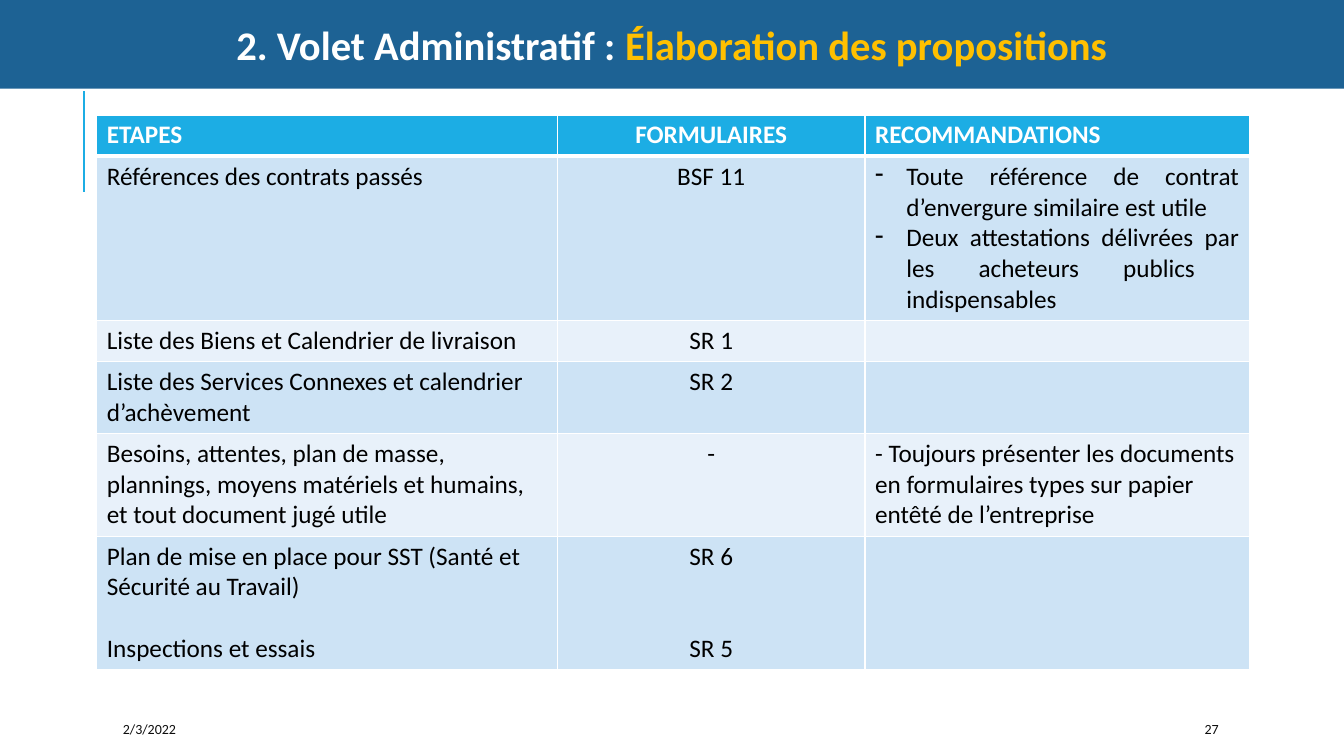
"""Build the slide on preparing the administrative part of a bid."""
from dataclasses import dataclass

from lxml import etree
from pptx import Presentation
from pptx import util as u
from pptx.dml.color import RGBColor
from pptx.enum import shapes, text
from pptx.oxml import ns

WHITE = RGBColor(0xFF, 0xFF, 0xFF)
BLACK = RGBColor(0x00, 0x00, 0x00)
INK = RGBColor(0x0D, 0x0D, 0x0D)
GOLD = RGBColor(0xFF, 0xC0, 0x00)
NAVY = RGBColor(0x1D, 0x62, 0x94)
CYAN = RGBColor(0x1C, 0xAD, 0xE4)
BAND_DARK = RGBColor(0xCD, 0xE3, 0xF5)
BAND_LIGHT = RGBColor(0xE8, 0xF1, 0xFA)

FONT = "Calibri"
BODY_SIZE = 18
LINE_HEIGHT = 22
COLUMN_WIDTHS = (4.57, 3.05, 3.81)
HEADINGS = ("ETAPES", "FORMULAIRES", "RECOMMANDATIONS")


@dataclass(frozen=True)
class Step:
    """One table row; blank_lines is the gap above a cell's second paragraph."""
    height: float
    cells: tuple[tuple[str, ...], ...]
    blank_lines: tuple[int, ...] = (0, 0, 0)
    bulleted: bool = False


@dataclass(frozen=True)
class FooterItem:
    """A short text at the foot of the slide."""
    wording: str
    left: float
    width: float


STEPS = (
    Step(1.63, (
        ("Références des contrats passés",),
        ("BSF 11",),
        ("Toute référence de contrat d’envergure similaire est utile",
         "Deux attestations délivrées par les acheteurs publics  indispensables"),
    ), bulleted=True),
    Step(0.41, (("Liste des Biens et Calendrier de livraison",), ("SR 1",), ())),
    Step(0.71, (("Liste des Services Connexes et calendrier d’achèvement",), ("SR 2",), ())),
    Step(1.02, (
        ("Besoins, attentes, plan de masse, plannings, moyens matériels et humains, "
         "et tout document jugé utile",),
        ("-",),
        ("- Toujours présenter les documents en formulaires types sur papier "
         "entêté de l’entreprise",),
    )),
    Step(1.32, (
        ("Plan de mise en place pour SST (Santé et Sécurité au Travail)",
         "Inspections et essais"),
        ("SR 6", "SR 5"),
        (),
    ), blank_lines=(1, 2, 0)),
)
FOOTER = (FooterItem("2/3/2022", 1.12, 2.36), FooterItem("27", 11.85, 1.06))


def add_span(para, wording: str, size: float, color: RGBColor, bold: bool = False) -> None:
    """Add one formatted run to a paragraph."""
    span = para.add_run()
    span.text = wording
    span.font.name = FONT
    span.font.size = u.Pt(size)
    span.font.bold = bold
    span.font.color.rgb = color


def add_title(page) -> None:
    """Draw the title band across the top."""
    box = page.shapes.add_shape(
        shapes.MSO_SHAPE.RECTANGLE, 0, 0, u.Inches(13.33), u.Inches(0.88))
    box.shadow.inherit = False
    box.fill.solid()
    box.fill.fore_color.rgb = NAVY
    box.line.fill.background()
    frame = box.text_frame
    frame.word_wrap = True
    frame.vertical_anchor = text.MSO_ANCHOR.MIDDLE
    frame.margin_left = frame.margin_right = u.Inches(0.11)
    frame.margin_top = frame.margin_bottom = u.Inches(0.06)
    para = frame.paragraphs[0]
    para.alignment = text.PP_ALIGN.CENTER
    add_span(para, "2. Volet Administratif : ", 29, WHITE, True)
    add_span(para, "Élaboration des propositions", 29, GOLD, True)


def add_accent(page) -> None:
    """Draw the thin vertical line beside the table."""
    line = page.shapes.add_connector(
        shapes.MSO_CONNECTOR.STRAIGHT,
        u.Inches(0.83), u.Inches(1.9), u.Inches(0.83), u.Inches(0.9))
    line.line.color.rgb = CYAN
    line.line.width = u.Pt(1.5)
    etree.SubElement(line._element.spPr, ns.qn("a:effectLst"))


def add_footer(page, item: FooterItem) -> None:
    """Write one footer text."""
    box = page.shapes.add_textbox(
        u.Inches(item.left), u.Inches(7.08), u.Inches(item.width), u.Inches(0.3))
    box.text_frame.word_wrap = True
    box.text_frame.vertical_anchor = text.MSO_ANCHOR.MIDDLE
    add_span(box.text_frame.paragraphs[0], item.wording, 10, INK)


def style_cell(cell, fill: RGBColor, row: int) -> None:
    """Give a cell white borders, thick under the header, and a solid fill."""
    properties = cell._tc.get_or_add_tcPr()
    widths = {"L": 1, "R": 1, "T": 3 if row == 1 else 1, "B": 3 if row == 0 else 1}
    for side, width in widths.items():
        border = etree.SubElement(
            properties, ns.qn(f"a:ln{side}"), w=str(int(u.Pt(width))))
        solid = etree.SubElement(border, ns.qn("a:solidFill"))
        etree.SubElement(solid, ns.qn("a:srgbClr"), val=str(WHITE))
    cell.fill.solid()
    cell.fill.fore_color.rgb = fill


def add_dash(para) -> None:
    """Turn a paragraph into a justified item with a hanging dash."""
    para.alignment = text.PP_ALIGN.JUSTIFY
    properties = para._p.get_or_add_pPr()
    indent = int(u.Inches(0.31))
    properties.set("marL", str(indent))
    properties.set("indent", str(-indent))
    etree.SubElement(properties, ns.qn("a:buChar"), char="-")


def fill_cell(cell, wordings: tuple[str, ...], column: int, color: RGBColor,
              bold: bool = False, blank_lines: int = 0, dashed: bool = False) -> None:
    """Write the paragraphs of one cell."""
    frame = cell.text_frame
    frame.paragraphs[0].font.size = u.Pt(BODY_SIZE)
    for index, wording in enumerate(wordings):
        para = frame.add_paragraph() if index else frame.paragraphs[0]
        if index and blank_lines:
            para.space_before = u.Pt(blank_lines * LINE_HEIGHT)
        if dashed:
            add_dash(para)
        else:
            para.alignment = text.PP_ALIGN.CENTER if column == 1 else text.PP_ALIGN.LEFT
        add_span(para, wording, BODY_SIZE, color, bold)


def add_steps(page) -> None:
    """Draw the table of steps, forms and recommendations."""
    heights = (0.41, *(step.height for step in STEPS))
    table = page.shapes.add_table(
        len(heights), len(COLUMN_WIDTHS), u.Inches(0.96), u.Inches(1.14),
        u.Inches(sum(COLUMN_WIDTHS)), u.Inches(sum(heights))).table
    table.horz_banding = False
    for row, height in enumerate(heights):
        table.rows[row].height = u.Inches(height)
    for column, width in enumerate(COLUMN_WIDTHS):
        table.columns[column].width = u.Inches(width)
        heading = table.cell(0, column)
        style_cell(heading, CYAN, 0)
        fill_cell(heading, (HEADINGS[column],), column, WHITE, bold=True)
        for row, step in enumerate(STEPS, start=1):
            cell = table.cell(row, column)
            style_cell(cell, BAND_DARK if row % 2 else BAND_LIGHT, row)
            fill_cell(cell, step.cells[column], column, BLACK,
                      blank_lines=step.blank_lines[column],
                      dashed=step.bulleted and column == 2)


def main() -> None:
    """Build and save the deck."""
    deck = Presentation()
    deck.slide_width = u.Inches(13.33)
    deck.slide_height = u.Inches(7.5)
    page = deck.slides.add_slide(deck.slide_layouts[6])
    add_accent(page)
    for item in FOOTER:
        add_footer(page, item)
    add_title(page)
    add_steps(page)
    deck.save("out.pptx")


if __name__ == "__main__":
    main()
